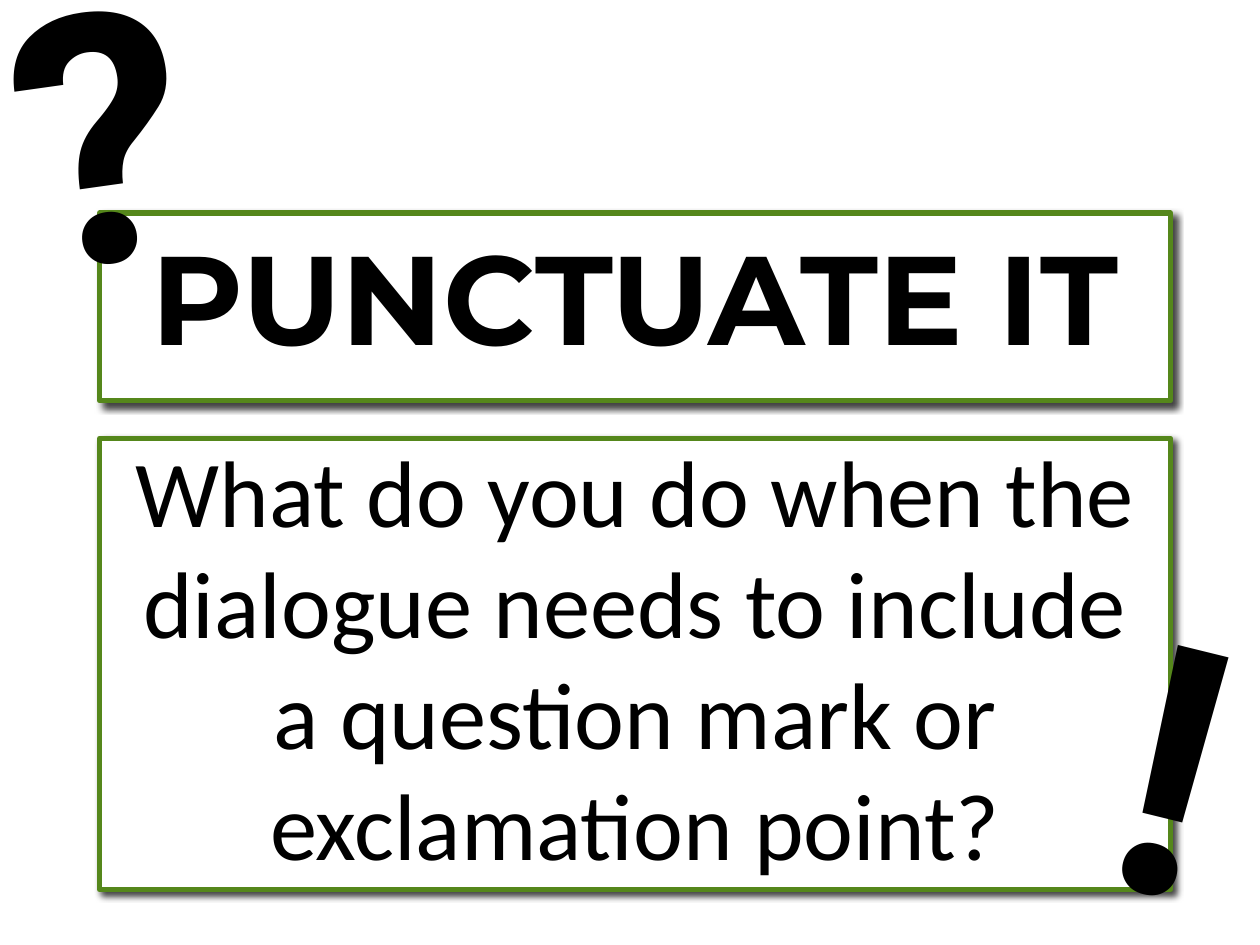
from dataclasses import dataclass

from lxml import etree
from pptx import Presentation
from pptx.dml.color import RGBColor
from pptx.enum.text import MSO_ANCHOR, MSO_AUTO_SIZE, PP_ALIGN
from pptx.oxml.ns import qn
from pptx.util import Inches, Pt

CENTER, LEFT = PP_ALIGN.CENTER, PP_ALIGN.LEFT
TOP, BOTTOM = MSO_ANCHOR.TOP, MSO_ANCHOR.BOTTOM
NO_FIT = MSO_AUTO_SIZE.NONE
TITLE_AND_CONTENT = 1


@dataclass(frozen=True)
class Theme:
    ink: str = "000000"
    paper: str = "FFFFFF"
    border: str = "55871B"
    title_outline: str = "7AC025"
    glow: str = "92D050"
    title_font: str = "Montserrat"
    body_font: str = "Calibri"
    mark_font: str = "Roboto"
    title_size: int = 72
    body_size: int = 54
    mark_size: int = 199


THEME = Theme()


def place(box, left, top, width, height):
    box.left, box.top = Inches(left), Inches(top)
    box.width, box.height = Inches(width), Inches(height)


def add_color(parent, color, alpha=100):
    node = etree.SubElement(parent, qn("a:srgbClr"), val=color)
    if alpha < 100:
        etree.SubElement(node, qn("a:alpha"), val=str(alpha * 1000))


def add_effect(box, tag, color, alpha=100, **attributes):
    box.shadow.inherit = False
    effects = box._element.spPr.find(qn("a:effectLst"))
    values = {name: str(value) for name, value in attributes.items()}
    add_color(etree.SubElement(effects, qn(tag), values), color, alpha)


def outline_text(span, color, width):
    properties = span._r.get_or_add_rPr()
    line = etree.Element(qn("a:ln"), w=str(Pt(width)))
    add_color(etree.SubElement(line, qn("a:solidFill")), color)
    properties.insert(0, line)


def write(box, text, font, size, align, anchor, bold=False):
    """Fill the box with one paragraph and return its run."""
    frame = box.text_frame
    frame.word_wrap = True
    frame.auto_size = NO_FIT
    frame.vertical_anchor = anchor
    para = frame.paragraphs[0]
    para.alignment = align
    para.space_before = Pt(0)
    span = para.add_run()
    span.text = text
    span.font.name = font
    span.font.size = Pt(size)
    span.font.bold = bold
    span.font.color.rgb = RGBColor.from_string(THEME.ink)
    return span


def remove_bullet(para):
    properties = para._p.get_or_add_pPr()
    properties.set("marL", "0")
    properties.set("indent", "0")
    etree.SubElement(properties, qn("a:buNone"))


def style_panel(box, top, height):
    """Give a placeholder the white, green-framed, shadowed panel look."""
    place(box, 0.79, top, 8.5, height)
    box.fill.solid()
    box.fill.fore_color.rgb = RGBColor.from_string(THEME.paper)
    box.line.color.rgb = RGBColor.from_string(THEME.border)
    box.line.width = Pt(3)
    add_effect(box, "a:outerShdw", THEME.ink, 72, blurRad=Pt(4), dist=Pt(3),
               dir=49 * 60000, algn="tl", rotWithShape=0)


def add_title(page, text):
    box = page.shapes.title
    style_panel(box, 1.69, 1.49)
    span = write(box, text, THEME.title_font, THEME.title_size, CENTER, TOP, True)
    outline_text(span, THEME.title_outline, 0.75)


def add_question(page, text):
    box = page.placeholders[1]
    style_panel(box, 3.48, 3.58)
    para = box.text_frame.paragraphs[0]
    remove_bullet(para)
    write(box, text, THEME.body_font, THEME.body_size, CENTER, BOTTOM)
    para.line_spacing = 0.98


def add_mark(page, mark, left, top, width, rotation):
    """Add a large tilted punctuation mark with a green glow."""
    box = page.shapes.add_textbox(0, 0, 0, 0)
    place(box, left, top, width, 3.45)
    box.rotation = rotation
    add_effect(box, "a:glow", THEME.glow, rad=Pt(3))
    span = write(box, mark, THEME.mark_font, THEME.mark_size, LEFT, TOP, True)
    outline_text(span, THEME.paper, 1)


def main():
    deck = Presentation()
    deck.slide_width, deck.slide_height = Inches(10), Inches(7.5)
    page = deck.slides.add_slide(deck.slide_layouts[TITLE_AND_CONTENT])
    add_title(page, "PUNCTUATE IT")
    add_question(page, "What do you do when the dialogue needs to include "
                       "a question mark or exclamation point?")
    add_mark(page, "?", 0, -0.8, 2.65, 352)
    add_mark(page, "!", 8.84, 4.45, 2.24, 13.8)
    deck.save("out.pptx")


if __name__ == "__main__":
    main()
